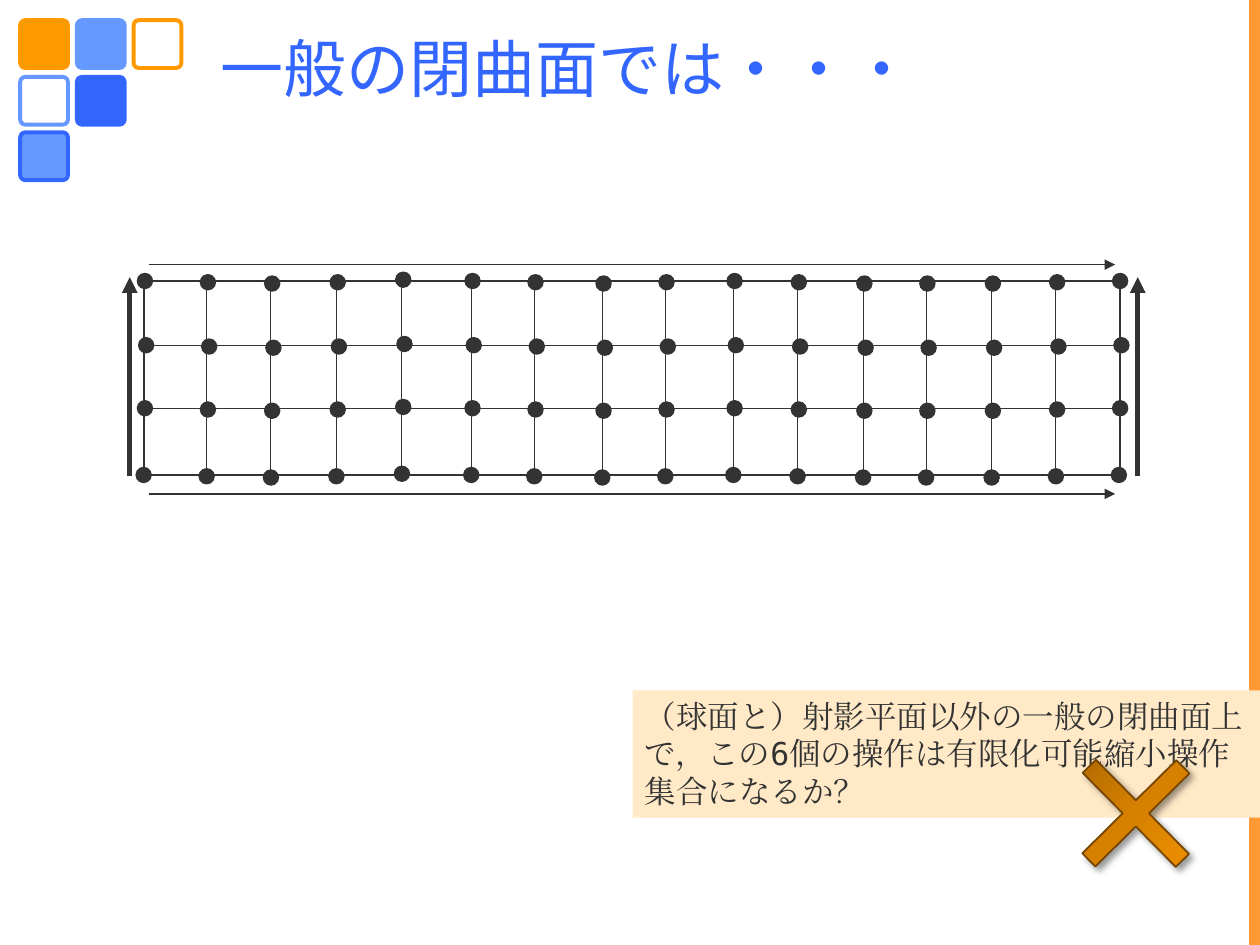
from dataclasses import dataclass

from lxml.etree import SubElement
from pptx import Presentation
from pptx.dml.color import RGBColor
from pptx.enum.shapes import MSO_CONNECTOR, MSO_SHAPE
from pptx.enum.text import MSO_ANCHOR, MSO_AUTO_SIZE, PP_ALIGN
from pptx.oxml import parse_xml
from pptx.oxml.ns import nsdecls, qn
from pptx.util import Inches, Pt


@dataclass(frozen=True)
class Theme:
    ink: str = "333333"
    blue: str = "3366FF"
    sky: str = "6699FF"
    gold: str = "FF9900"
    edge: str = "FF9933"
    white: str = "FFFFFF"
    cream: str = "FFE9C7"
    brown: str = "744500"
    fade: tuple = ((0, "975B00"), (50, "D78100"), (100, "FF9900"))
    mono: str = "DejaVu Sans Mono"
    serif: str = "Times New Roman"
    head: int = 36
    body: int = 18


THEME = Theme()
DOT = 0.12
# Left edge of each dot column, its small vertical shift, and the dot rows
COLS = (1.09, 1.59, 2.1, 2.62, 3.14, 3.69, 4.19, 4.73,
        5.23, 5.77, 6.28, 6.8, 7.3, 7.82, 8.33, 8.83)
SHIFTS = (-0.01, 0, 0.01, 0, -0.02, -0.01, 0, 0.01,
          0, -0.01, 0, 0.01, 0.01, 0.01, 0, -0.01)
ROWS = ((2.18, 0), (2.69, 0.01), (3.19, 0), (3.72, -0.01))


def rgb(code):
    return RGBColor.from_string(code)


def style(item, **values):
    for name, value in values.items():
        setattr(item, name, value)


def add_box(shapes, kind, at, fill=None, line=None, width=0.75, adj=None):
    box = shapes.add_shape(kind, *map(Inches, at))
    box.shadow.inherit = False
    if fill:
        box.fill.solid()
        box.fill.fore_color.rgb = rgb(fill)
    else:
        box.fill.background()
    if line:
        box.line.color.rgb = rgb(line)
        box.line.width = Pt(width)
    else:
        box.line.fill.background()
    if adj is not None:
        box.adjustments[0] = adj
    return box


def add_line(shapes, start, end, width=0.5, arrow=False):
    line = shapes.add_connector(MSO_CONNECTOR.STRAIGHT,
                                *map(Inches, (*start, *end)))
    line.line.color.rgb = rgb(THEME.ink)
    line.line.width = Pt(width)
    props = line._element.spPr
    if arrow:
        SubElement(props.find(qn("a:ln")), qn("a:tailEnd"), type="triangle")
    SubElement(props, qn("a:effectLst"))


def add_run(para, text, size, face, color):
    run = para.add_run()
    run.text = text
    style(run.font, size=Pt(size), name=face)
    run.font.color.rgb = rgb(color)
    SubElement(run._r.get_or_add_rPr(), qn("a:ea"), typeface=face)


def add_title(slide):
    title = slide.shapes.title
    style(title, left=Inches(1.65), top=Inches(0.18),
          width=Inches(7.73), height=Inches(0.71))
    style(title.text_frame, word_wrap=True, vertical_anchor=MSO_ANCHOR.MIDDLE,
          auto_size=MSO_AUTO_SIZE.SHAPE_TO_FIT_TEXT)
    para = title.text_frame.paragraphs[0]
    para.alignment = PP_ALIGN.LEFT
    add_run(para, "一般の閉曲面では・・・", THEME.head, THEME.mono, THEME.blue)


def add_decor(shapes):
    tiles = (
        (0.61, 0.16, THEME.sky, THEME.sky),
        (0.61, 0.61, THEME.blue, THEME.blue),
        (0.16, 0.16, THEME.gold, THEME.gold),
        (0.16, 0.61, THEME.white, THEME.sky),
        (0.16, 1.05, THEME.sky, THEME.blue),
        (1.06, 0.16, THEME.white, THEME.gold),
    )
    for left, top, fill, line in tiles:
        add_box(shapes, MSO_SHAPE.ROUNDED_RECTANGLE, (left, top, 0.38, 0.38),
                fill, line, 2.25, 0.11)
    add_box(shapes, MSO_SHAPE.RECTANGLE, (9.92, 0, 0.08, 7.5),
            THEME.edge, THEME.edge)


def add_note(shapes):
    note = add_box(shapes, MSO_SHAPE.RECTANGLE, (5.02, 5.48, 4.98, 1.01),
                   THEME.cream)
    style(note.text_frame, word_wrap=True, vertical_anchor=MSO_ANCHOR.TOP,
          auto_size=MSO_AUTO_SIZE.SHAPE_TO_FIT_TEXT)
    para = note.text_frame.paragraphs[0]
    para.alignment = PP_ALIGN.LEFT
    for text, face in (
            ("（球面と）射影平面以外の一般の閉曲面上で，この", THEME.serif),
            ("6", THEME.mono),
            ("個の操作は有限化可能縮小操作集合になるか？", THEME.serif)):
        add_run(para, text, THEME.body, face, THEME.ink)


def add_cross(shapes):
    cross = add_box(shapes, MSO_SHAPE.CROSS, (8.49, 5.93, 1.05, 1.05),
                    THEME.gold, THEME.brown, 1, 0.43)
    cross.rotation = 315.3
    props = cross._element.spPr
    stops = "".join(
        f'<a:gs pos="{pos * 1000}"><a:srgbClr val="{code}"/></a:gs>'
        for pos, code in THEME.fade)
    fade = parse_xml(
        f'<a:gradFill {nsdecls("a")} rotWithShape="0"><a:gsLst>{stops}</a:gsLst>'
        '<a:path path="circle"><a:fillToRect r="100000" b="100000"/></a:path>'
        '</a:gradFill>')
    props.replace(props.find(qn("a:solidFill")), fade)
    # Soft shadow towards the lower right
    shade = SubElement(props.find(qn("a:effectLst")), qn("a:outerShdw"),
                       blurRad=str(Pt(4)), dist=str(Pt(3)),
                       dir=str(45 * 60000), rotWithShape="0")
    color = SubElement(shade, qn("a:srgbClr"), val="000000")
    SubElement(color, qn("a:alpha"), val="40000")


def add_grid(shapes):
    add_box(shapes, MSO_SHAPE.RECTANGLE, (1.14, 2.23, 7.75, 1.54),
            line=THEME.ink, width=1)
    for y in (2.74, 3.24):
        add_line(shapes, (1.14, y), (8.89, y))
    spots = list(zip(COLS, SHIFTS))
    for x, shift in spots[1:-1]:
        add_line(shapes, (x + 0.05, 2.25 + shift), (x + 0.05, 3.78 + shift))
    for x, shift in spots:
        for y, lean in ROWS:
            add_box(shapes, MSO_SHAPE.OVAL, (x + lean, y + shift, DOT, DOT),
                    THEME.ink, THEME.ink)


def add_arrows(shapes):
    for y in (2.1, 3.92):
        add_line(shapes, (1.18, y), (8.85, y), 0.75, True)
    for x in (1.03, 9.03):
        add_line(shapes, (x, 3.78), (x, 2.2), 3, True)


def main():
    deck = Presentation()
    style(deck, slide_width=Inches(10), slide_height=Inches(7.5))
    slide = deck.slides.add_slide(deck.slide_layouts[5])
    # Frame and heading
    add_decor(slide.shapes)
    add_title(slide)
    # Question and its answer
    add_note(slide.shapes)
    add_cross(slide.shapes)
    # Lattice with its glued edges
    lattice = slide.shapes.add_group_shape().shapes
    add_grid(lattice)
    add_arrows(lattice)
    deck.save("out.pptx")


if __name__ == "__main__":
    main()
